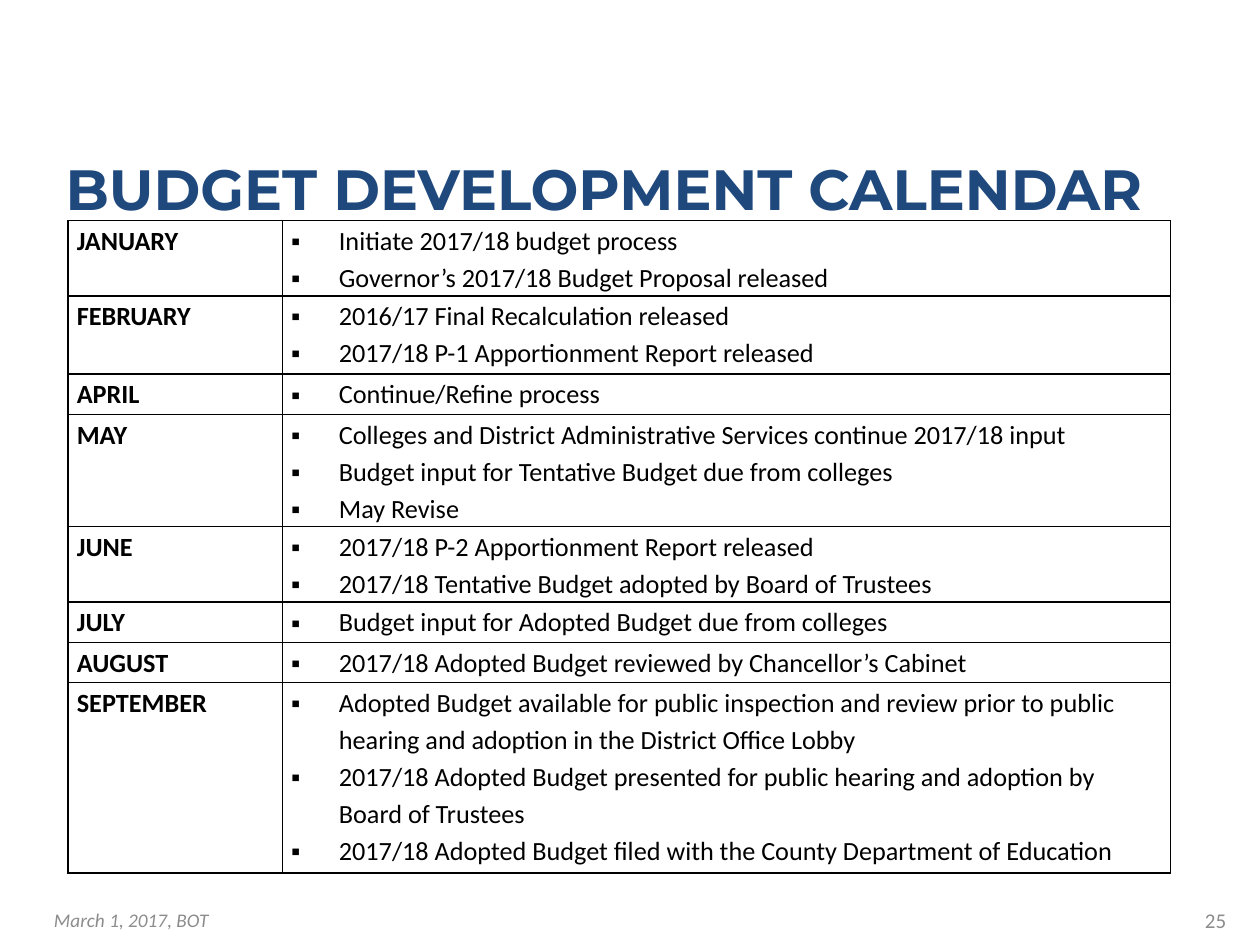
from dataclasses import dataclass

from lxml.etree import SubElement
from pptx import Presentation
from pptx.dml.color import RGBColor
from pptx.enum.text import MSO_ANCHOR, MSO_AUTO_SIZE, PP_ALIGN
from pptx.oxml.ns import qn
from pptx.util import Inches, Pt


@dataclass(frozen=True)
class Theme:
    title_font: str = "Montserrat"
    body_font: str = "Calibri"
    title_color: str = "1F497D"
    ink: str = "000000"
    muted: str = "8C8C8C"
    title_size: float = 32.4
    body_size: float = 15
    date_size: float = 11
    number_size: float = 12
    border: float = 1


@dataclass(frozen=True)
class Month:
    name: str
    height: float
    tasks: tuple[str, ...]


THEME = Theme()
COLUMNS = (1.7, 7.05)
INDENT = 0.38
MONTHS = (
    Month("JANUARY", 0.6, (
        "Initiate 2017/18 budget process",
        "Governor’s 2017/18 Budget Proposal released")),
    Month("FEBRUARY", 0.62, (
        "2016/17 Final Recalculation released",
        "2017/18 P-1 Apportionment Report released")),
    Month("APRIL", 0.32, ("Continue/Refine process",)),
    Month("MAY", 0.89, (
        "Colleges and District Administrative Services continue 2017/18 input",
        "Budget input for Tentative Budget due from colleges",
        "May Revise")),
    Month("JUNE", 0.6, (
        "2017/18 P-2 Apportionment Report released",
        "2017/18 Tentative Budget adopted by Board of Trustees")),
    Month("JULY", 0.32, ("Budget input for Adopted Budget due from colleges",)),
    Month("AUGUST", 0.32, ("2017/18 Adopted Budget reviewed by Chancellor’s Cabinet",)),
    Month("SEPTEMBER", 1.51, (
        "Adopted Budget available for public inspection and review prior to public "
        "hearing and adoption in the District Office Lobby",
        "2017/18 Adopted Budget presented for public hearing and adoption by "
        "Board of Trustees",
        "2017/18 Adopted Budget filed with the County Department of Education")),
)


def write(p, text: str, *, size: float, font: str = THEME.body_font,
          color: str = THEME.ink, bold: bool = False, italic: bool = False,
          align=PP_ALIGN.LEFT, spacing: float = 1.0) -> None:
    p.alignment = align
    p.line_spacing = spacing
    p.space_before = Pt(0)
    r = p.add_run()
    r.text = text
    f = r.font
    f.name, f.size, f.bold, f.italic = font, Pt(size), bold, italic
    f.color.rgb = RGBColor.from_string(color)


def add_bullet(p) -> None:
    pPr = p._p.get_or_add_pPr()
    pPr.set("marL", str(Inches(INDENT)))
    pPr.set("indent", str(-Inches(INDENT)))
    SubElement(pPr, qn("a:buFont"), typeface="Arial")
    SubElement(pPr, qn("a:buChar"), char="▪")


def add_borders(cell) -> None:
    tcPr = cell._tc.get_or_add_tcPr()
    for i, side in enumerate(("a:lnL", "a:lnR", "a:lnT", "a:lnB")):
        ln = tcPr.makeelement(qn(side), {"w": str(Pt(THEME.border))})
        fill = SubElement(ln, qn("a:solidFill"))
        SubElement(fill, qn("a:srgbClr"), val=THEME.ink)
        tcPr.insert(i, ln)


def fill_cell(cell, lines: tuple[str, ...], *, bold: bool = False,
              bulleted: bool = False) -> None:
    cell.margin_left = cell.margin_right = Inches(0.07)
    cell.margin_top = cell.margin_bottom = 0
    cell.fill.background()
    add_borders(cell)
    tf = cell.text_frame
    for i, line in enumerate(lines):
        p = tf.add_paragraph() if i else tf.paragraphs[0]
        if bulleted:
            add_bullet(p)
        write(p, line, size=THEME.body_size, bold=bold, spacing=1.15)


def add_title(s, text: str) -> None:
    sp = s.shapes.title
    sp.left, sp.top, sp.width, sp.height = map(Inches, (0.42, 1.17, 9, 0.67))
    tf = sp.text_frame
    tf.vertical_anchor = MSO_ANCHOR.TOP
    tf.auto_size = MSO_AUTO_SIZE.NONE
    write(tf.paragraphs[0], text, size=THEME.title_size, font=THEME.title_font,
          color=THEME.title_color, bold=True)


def add_calendar(s, months: tuple[Month, ...]) -> None:
    height = sum(month.height for month in months)
    table = s.shapes.add_table(len(months), len(COLUMNS), Inches(0.54), Inches(1.75),
                               Inches(sum(COLUMNS)), Inches(height)).table
    table.first_row = table.horz_banding = False
    for column, width in zip(table.columns, COLUMNS):
        column.width = Inches(width)
    for row, month in zip(table.rows, months):
        row.height = Inches(month.height)
        name, tasks = row.cells
        fill_cell(name, (month.name,), bold=True)
        fill_cell(tasks, month.tasks, bulleted=True)


def add_footer(s, text: str, left: float, width: float, **fmt) -> None:
    sp = s.shapes.add_textbox(Inches(left), Inches(7.1), Inches(width), Inches(0.4))
    tf = sp.text_frame
    tf.word_wrap = True
    tf.vertical_anchor = MSO_ANCHOR.MIDDLE
    write(tf.paragraphs[0], text, color=THEME.muted, **fmt)


def main() -> None:
    prs = Presentation()
    prs.slide_width, prs.slide_height = Inches(10), Inches(7.5)
    s = prs.slides.add_slide(prs.slide_layouts[5])
    add_title(s, "BUDGET DEVELOPMENT CALENDAR")
    add_calendar(s, MONTHS)
    add_footer(s, "March 1, 2017, BOT", 0.33, 3.75, size=THEME.date_size, italic=True)
    add_footer(s, "25", 7.5, 2.33, size=THEME.number_size, align=PP_ALIGN.RIGHT)
    prs.save("out.pptx")


if __name__ == "__main__":
    main()
